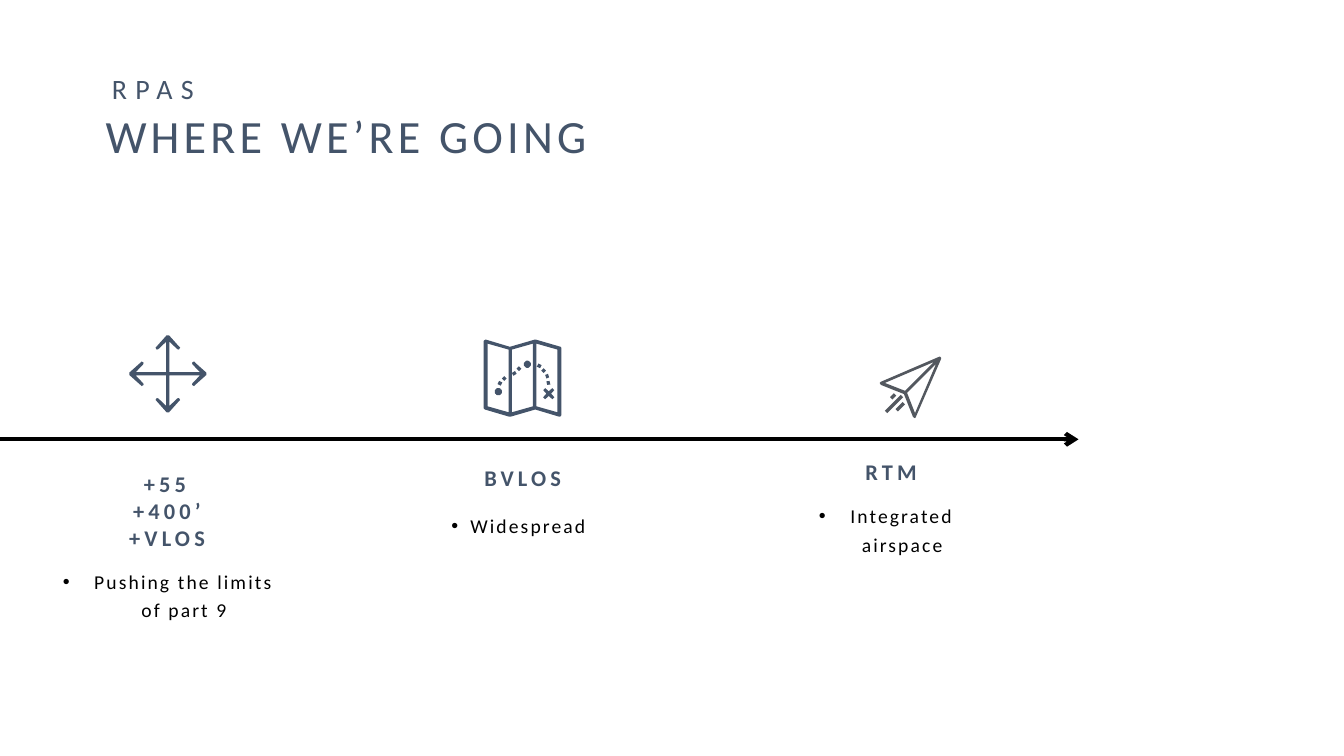
"""Build the RPAS "Where we're going" timeline slide."""
from copy import deepcopy
from dataclasses import dataclass
from math import cos, pi, radians, sin

from lxml.etree import SubElement
from pptx import Presentation
from pptx.dml.color import RGBColor
from pptx.enum.shapes import MSO_CONNECTOR as CONN
from pptx.enum.text import MSO_AUTO_SIZE as AUTO, PP_ALIGN as AL
from pptx.oxml.ns import qn
from pptx.slide import Slide
from pptx.util import Cm, Pt

BLACK = RGBColor(0x00, 0x00, 0x00)
SLATE = RGBColor(0x44, 0x54, 0x6A)
GREY = RGBColor(0x53, 0x58, 0x5F)

Points = list[tuple[float, float]]


@dataclass(frozen=True)
class Style:
    size: float
    color: RGBColor
    tracking: int
    bold: bool = False
    align: AL = AL.CENTER
    leading: float | None = None


@dataclass(frozen=True)
class Label:
    text: str
    left: float
    top: float
    width: float
    height: float
    style: Style
    indent: float = 0


@dataclass(frozen=True)
class Icon:
    left: float
    top: float
    color: RGBColor
    contours: list[Points]


KICKER = Style(20, SLATE, 600, align=AL.LEFT)
TITLE = Style(33, SLATE, 300, align=AL.LEFT)
STAGE = Style(16, SLATE, 300, bold=True)
DETAIL = Style(14, BLACK, 150, leading=20.5)

LABELS = [
    Label("BVLOS", 9.86, 11.56, 6.63, 0.94, STAGE),
    Label("+55\v+400’\n+VLOS", 1.52, 11.73, 5.38, 2.31, STAGE),
    Label("RTM", 18.77, 11.43, 7.37, 0.94, STAGE),
    Label("Widespread", 10.31, 12.7, 5.51, 0.91, DETAIL, 0.48),
    Label("Pushing the limits of part 9", 1.09, 14.1, 6.3, 1.68, DETAIL, 0.79),
    Label("Integrated airspace", 19.43, 12.45, 5.82, 1.68, DETAIL, 0.79),
    Label("WHERE WE’RE GOING", 2.41, 2.57, 21.41, 1.68, TITLE),
    Label("RPAS", 2.57, 1.68, 8.71, 1.12, KICKER),
]


def quarter_turns(arm: Points, cx: float, cy: float) -> Points:
    """Repeat an arm in four directions around a centre."""
    outline = []
    for _ in range(4):
        outline += [(cx + x, cy + y) for x, y in arm]
        arm = [(-y, x) for x, y in arm]
    return outline


def bar(cx: float, cy: float, angle: float, length: float, width: float = 8) -> Points:
    """Outline a tilted bar around its centre."""
    c, n = cos(radians(angle)), sin(radians(angle))
    corners = [(i * length / 2, j * width / 2)
               for i, j in ((-1, -1), (1, -1), (1, 1), (-1, 1))]
    return [(cx + x * c - y * n, cy + x * n + y * c) for x, y in corners]


def dot(cx: float, cy: float, radius: float = 9, steps: int = 24) -> Points:
    """Outline a round dot."""
    return [(cx + radius * cos(2 * pi * i / steps), cy + radius * sin(2 * pi * i / steps))
            for i in range(steps)]


def panel(left: float, start: float, end: float) -> Points:
    """Outline one folded map panel."""
    right, depth = left + 53, 158
    return [(left, start), (right, end), (right, end + depth), (left, start + depth)]


def four_way() -> list[Points]:
    """Outline the four-way arrow."""
    half = [(-4, -4), (-4, -81), (-24, -62), (-28, -61), (-31, -66), (-28, -69), (-3, -97)]
    return [quarter_turns(half + [(-x, y) for x, y in reversed(half)], 98, 98)]


def route_map() -> list[Points]:
    """Outline the folded map with its route."""
    sheet = [(0, 3), (4, 0), (6, 0), (66, 18), (128, 0), (132, 0), (194, 18), (196, 21),
             (196, 190), (193, 194), (190, 194), (130, 176), (68, 194), (64, 194),
             (3, 176), (0, 173)]
    route = [(41, 110, -65), (52, 98, -45), (77, 85, -32), (89, 73, -45),
             (140, 66, 25), (151, 78, 45), (160, 92, 70), (163, 109, 80)]
    panels = [panel(10, 10, 25), panel(71, 25, 10), panel(133, 10, 25)]
    goal = quarter_turns([(0, -6), (9, -14), (14, -9)], 164, 136)
    dashes = [bar(x, y, angle, 9) for x, y, angle in route]
    return [sheet, *panels, dot(37, 131), dot(110, 62), goal, *dashes]


def paper_plane() -> list[Points]:
    """Outline the paper plane with its trail."""
    body = [(155, 3), (152, 0), (150, 0), (3, 63), (0, 66), (3, 71), (61, 94),
            (84, 152), (89, 155), (91, 152), (155, 5)]
    folds = [[(89, 142), (69, 91), (142, 18)], [(13, 66), (137, 13), (64, 86)]]
    trail = [(52, 126, 25), (36, 119, 56), (34, 100, 15)]
    return [body, *folds, *(bar(x, y, -45, length) for x, y, length in trail)]


def draw_icon(s: Slide, icon: Icon) -> None:
    """Draw an icon as one filled freeform."""
    first, *others = icon.contours
    fb = s.shapes.build_freeform(*first[0], scale=Cm(0.01))
    fb.add_line_segments(first[1:], close=True)
    for contour in others:
        fb.move_to(*contour[0])
        fb.add_line_segments(contour[1:], close=True)
    sp = fb.convert_to_shape(Cm(icon.left), Cm(icon.top))
    sp.shadow.inherit = False
    sp.fill.solid()
    sp.fill.fore_color.rgb = icon.color
    sp.line.fill.background()


def draw_label(s: Slide, label: Label) -> None:
    """Draw a text box with its style and optional bullet."""
    st = label.style
    box = map(Cm, (label.left, label.top, label.width, label.height))
    tf = s.shapes.add_textbox(*box).text_frame
    tf.text = label.text
    for name, value in {"word_wrap": True, "auto_size": AUTO.SHAPE_TO_FIT_TEXT}.items():
        setattr(tf, name, value)
    font = {"name": "Calibri", "size": Pt(st.size), "bold": st.bold}
    for p in tf.paragraphs:
        p.alignment = st.align
        if st.leading:
            p.line_spacing = Pt(st.leading)
        if label.indent:
            ppr = p._p.get_or_add_pPr()
            ppr.set("marL", str(Cm(label.indent)))
            ppr.set("indent", str(-Cm(label.indent)))
            SubElement(ppr, qn("a:buFont")).set("typeface", "Arial")
            SubElement(ppr, qn("a:buChar")).set("char", "•")
        for r in p.runs:
            for name, value in font.items():
                setattr(r.font, name, value)
            r.font.color.rgb = st.color
            r._r.get_or_add_rPr().set("spc", str(st.tracking))
        for br in p._p.findall(qn("a:br")):
            br.append(deepcopy(p.runs[0]._r.rPr))


def draw_timeline(s: Slide) -> None:
    """Draw the timeline arrow."""
    axis = s.shapes.add_connector(CONN.STRAIGHT, Cm(-0.03), Cm(11.07), Cm(27.18), Cm(11.07))
    axis.line.color.rgb = BLACK
    axis.line.width = Pt(3)
    SubElement(axis.line._get_or_add_ln(), qn("a:tailEnd")).set("type", "arrow")
    SubElement(axis._element.spPr, qn("a:effectLst"))


def main() -> None:
    """Build and save the slide."""
    prs = Presentation()
    prs.slide_width, prs.slide_height = Cm(33.87), Cm(19.05)
    s = prs.slides.add_slide(prs.slide_layouts[6])
    draw_timeline(s)
    for label in LABELS:
        draw_label(s, label)
    for icon in (Icon(3.25, 8.44, SLATE, four_way()),
                 Icon(12.19, 8.56, SLATE, route_map()),
                 Icon(22.17, 8.99, GREY, paper_plane())):
        draw_icon(s, icon)
    prs.save("out.pptx")


if __name__ == "__main__":
    main()
